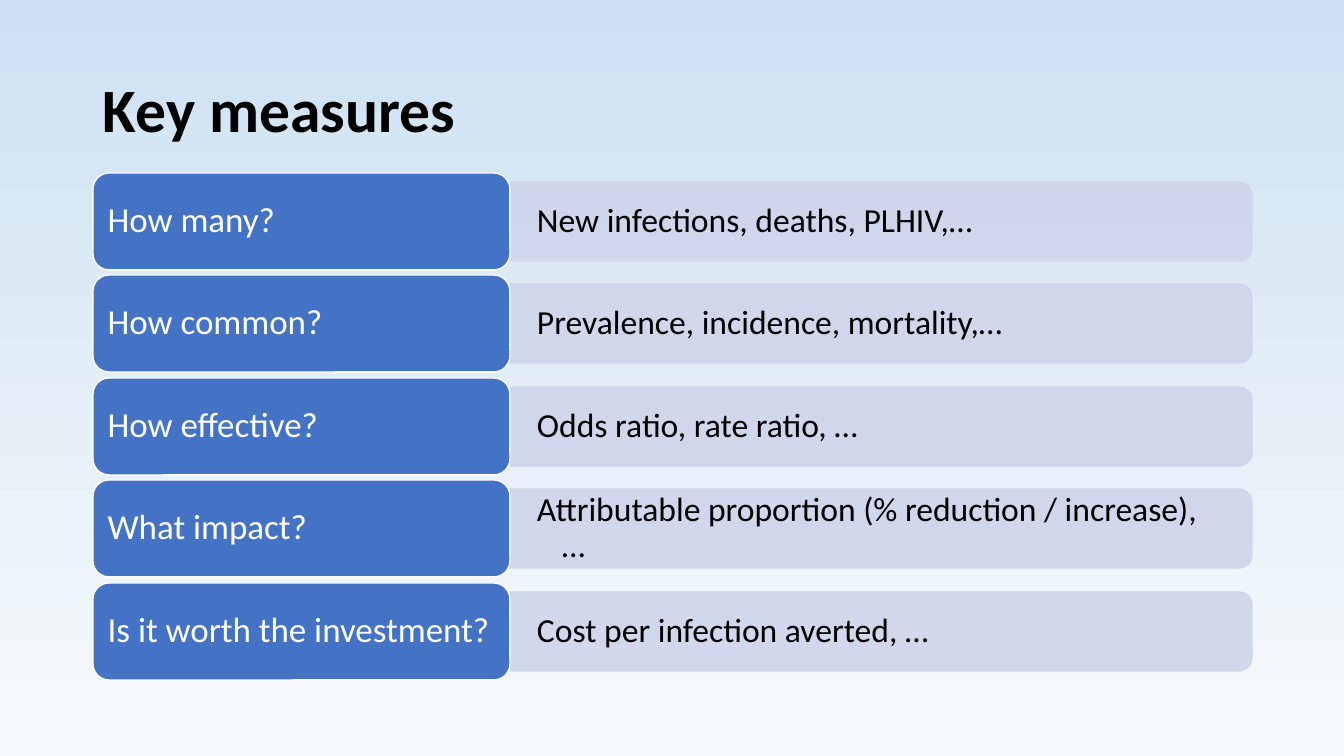
from pptx import Presentation
from pptx.dml.color import RGBColor
from pptx.enum.shapes import MSO_SHAPE
from pptx.enum.text import MSO_ANCHOR, PP_ALIGN
from pptx.oxml.ns import qn
from pptx.util import Pt
from lxml import etree

SCALE = 914400 / 100.8
ROUND = MSO_SHAPE.ROUNDED_RECTANGLE
HALF = MSO_SHAPE.ROUND_2_SAME_RECTANGLE
MIDDLE = MSO_ANCHOR.MIDDLE
LEFT = PP_ALIGN.LEFT

BLACK = RGBColor(0, 0, 0)
WHITE = RGBColor(255, 255, 255)
BLUE = RGBColor(0x44, 0x72, 0xC4)
LILAC = RGBColor(0xCF, 0xD5, 0xEA)
PALE = RGBColor(0xF7, 0xFA, 0xFD)
SKY = RGBColor(0xCE, 0xE1, 0xF2)

TITLE = {"size": Pt(44), "bold": True, "name": "Calibri"}
ASK = {"size": Pt(25), "name": "Calibri"}
REPLY = {"size": Pt(24), "name": "Calibri"}

ROWS = [
    ("How many?", "New infections, deaths, PLHIV,…"),
    ("How common?", "Prevalence, incidence, mortality,…"),
    ("How effective?", "Odds ratio, rate ratio, …"),
    ("What impact?", "Attributable proportion (% reduction / increase), …"),
    ("Is it worth the investment?", "Cost per infection averted, …"),
]
TOP = 173
SPAN = 410
TILE_H = 97
BAR_W = 742
BAR_H = 79


def px(count):
    return round(count * SCALE)


def box(*spot):
    return [px(side) for side in spot]


def write(shape, text, style, color, pad, hang=0):
    frame = shape.text_frame
    side, edge = px(pad[0]), px(pad[1])
    form = {"word_wrap": True, "vertical_anchor": MIDDLE,
            "margin_left": side, "margin_right": side,
            "margin_top": edge, "margin_bottom": edge}
    for key, value in form.items():
        setattr(frame, key, value)
    para = frame.paragraphs[0]
    para.alignment = LEFT
    para.line_spacing = 0.9
    if hang:
        props = para._p.get_or_add_pPr()
        props.set("marL", str(px(hang)))
        props.set("indent", str(-px(hang)))
    run = para.add_run()
    run.text = text
    for key, value in style.items():
        setattr(run.font, key, value)
    run.font.color.rgb = color


def label(slide, spot, *words):
    write(slide.shapes.add_textbox(*box(*spot)), *words)


def block(slide, kind, spot, fill, line):
    shape = slide.shapes.add_shape(kind, *box(*spot))
    shape.shadow.inherit = False
    shape.fill.solid()
    shape.fill.fore_color.rgb = fill
    shape.line.color.rgb = line
    shape.line.width = Pt(1)
    return shape


def bar(slide, left, mid):
    spot = (left + (BAR_W - BAR_H) / 2, mid - BAR_W / 2, BAR_H, BAR_W)
    shape = block(slide, HALF, spot, LILAC, LILAC)
    shape.rotation = 90
    for color in shape._element.spPr.iter(qn("a:srgbClr")):
        etree.SubElement(color, qn("a:alpha"), val="90000")


def row(slide, top, ask, reply):
    mid = top + TILE_H / 2
    bar(slide, 510, mid)
    label(slide, (510, mid - 35, 738, 70), reply, REPLY, BLACK, (27, 14), 25)
    tile = block(slide, ROUND, (93, top, 417, TILE_H), BLUE, WHITE)
    write(tile, ask, ASK, WHITE, (10, 5))


def shade(slide):
    fill = slide.background.fill
    fill.gradient()
    fill.gradient_angle = 90
    for stop, color in zip(fill.gradient_stops, (PALE, SKY)):
        stop.color.rgb = color


def main():
    deck = Presentation()
    deck.slide_width, deck.slide_height = box(1344, 756)
    slide = deck.slides.add_slide(deck.slide_layouts[6])
    shade(slide)
    label(slide, (93, 40, 1159, 146), "Key measures", TITLE, BLACK, (10, 5))
    for step, words in enumerate(ROWS):
        row(slide, TOP + SPAN * step // (len(ROWS) - 1), *words)
    deck.save("out.pptx")


main()
